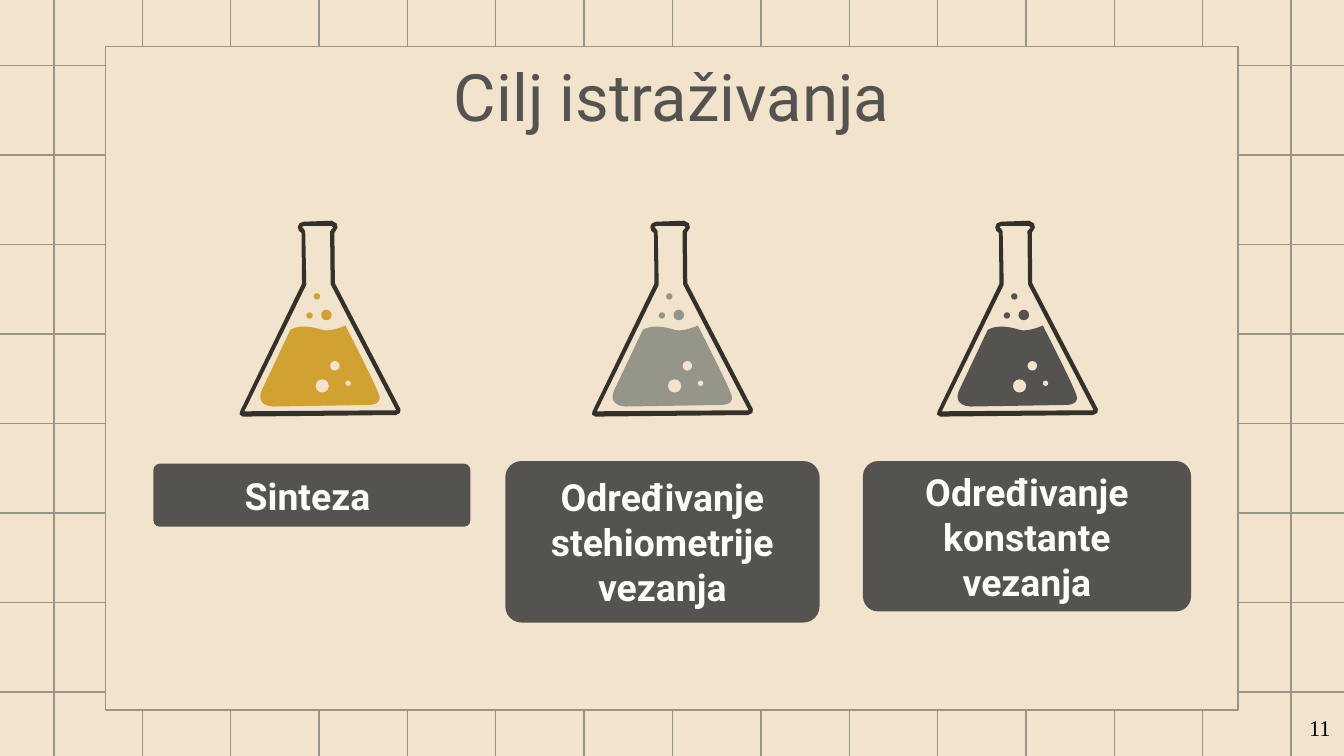
import pptx
import pptx.dml.color
import pptx.enum.shapes
import pptx.enum.text
import pptx.oxml
import pptx.oxml.ns
import pptx.util

Cm = pptx.util.Cm
RGB = pptx.dml.color.RGBColor
SHAPE = pptx.enum.shapes.MSO_SHAPE
ALIGN = pptx.enum.text.PP_ALIGN
ANCHOR = pptx.enum.text.MSO_ANCHOR

CREAM = RGB(0xF1, 0xE3, 0xCC)
SAGE = RGB(0x96, 0x95, 0x89)
CHARCOAL = RGB(0x55, 0x53, 0x4F)
GLASS = RGB(0x34, 0x31, 0x2B)
GOLD = RGB(0xD1, 0xA2, 0x32)
WHITE = RGB(0xFD, 0xFC, 0xF9)
BLACK = RGB(0, 0, 0)

WIDTH, HEIGHT = 25.4, 14.28

GLASS_OUTER = [
    (1.75, 0), (1.22, 0.02), (1.14, 0.05), (1.11, 0.12), (1.13, 0.19),
    (1.18, 0.23), (1.19, 1.19), (0.02, 3.6), (0.01, 3.66), (0.07, 3.7),
    (2.96, 3.67), (3.04, 3.63), (3.05, 3.56), (1.81, 1.18), (1.8, 0.23),
    (1.86, 0.13), (1.84, 0.05),
]
GLASS_INNER = [
    (1.75, 0.1), (1.78, 0.13), (1.75, 0.16), (1.72, 0.2), (1.73, 1.2),
    (2.97, 3.58), (0.1, 3.6), (1.27, 1.21), (1.27, 1.19), (1.25, 0.2),
    (1.22, 0.15), (1.19, 0.12), (1.22, 0.1),
]
LIQUID_CURVES = [
    [(0.43, 3.2), (0.43, 3.2), (0.28, 3.48), (0.64, 3.51)],
    [(2.46, 3.48), (2.46, 3.48), (2.72, 3.48), (2.64, 3.28)],
    [(2.64, 3.28), (2.57, 3.07), (2.01, 1.98), (2.01, 1.98)],
    [(2.01, 1.98), (2.01, 1.98), (1.73, 2.11), (1.57, 2.06)],
    [(1.57, 2.06), (1.3, 1.98), (1.12, 1.98), (0.97, 2.06)],
]
RISING_BUBBLES = [(1.65, 1.78, 0.2), (1.47, 1.43, 0.12), (1.33, 1.79, 0.12)]
LIQUID_BUBBLES = [(1.81, 2.74, 0.18), (2.06, 3.07, 0.1), (1.57, 3.12, 0.25)]

FLASK_TOP = 4.17
GOALS = [
    ("Sinteza\t", GOLD, 4.52, (2.9, 8.76, 5.99, 1.19)),
    ("Određivanje stehiometrije vezanja", SAGE, 11.18, (9.55, 8.71, 5.94, 3.05)),
    ("Određivanje konstante vezanja", CHARCOAL, 17.7, (16.31, 8.71, 6.2, 2.84)),
]


def write_text(frame, text, size, color, font="Roboto", bold=False,
               align=ALIGN.CENTER, anchor=ANCHOR.TOP, wrap=True):
    """Fill a text frame with one formatted paragraph."""
    frame.word_wrap = wrap
    frame.auto_size = pptx.enum.text.MSO_AUTO_SIZE.NONE
    frame.vertical_anchor = anchor
    paragraph = frame.paragraphs[0]
    paragraph.alignment = align
    run = paragraph.add_run()
    run.text = text
    run.font.name = font
    run.font.size = pptx.util.Pt(size)
    run.font.bold = bold
    run.font.color.rgb = color


def paint(shape, fill, line=None):
    """Give a shape its fill and an optional thin outline, without shadow."""
    shape.shadow.inherit = False
    shape.fill.solid()
    shape.fill.fore_color.rgb = fill
    if line is None:
        shape.line.fill.background()
    else:
        shape.line.color.rgb = line
        shape.line.width = pptx.util.Pt(0.75)


def add_preset(slide, kind, box, fill, line=None):
    """Add a painted preset shape in a box given in centimetres."""
    shape = slide.shapes.add_shape(kind, *map(Cm, box))
    paint(shape, fill, line)
    return shape


def add_outline(slide, left, top, contours, fill):
    """Add one freeform made of closed contours relative to a corner."""
    placed = [[(Cm(left + x), Cm(top + y)) for x, y in contour] for contour in contours]
    builder = slide.shapes.build_freeform(*placed[0][0])
    builder.add_line_segments(placed[0][1:], close=True)
    for contour in placed[1:]:
        builder.move_to(*contour[0])
        builder.add_line_segments(contour[1:], close=True)
    paint(builder.convert_to_shape(), fill)


def curve_points(controls, steps=10):
    """Sample a cubic Bezier curve."""
    points = []
    for step in range(steps + 1):
        t = step / steps
        weights = ((1 - t) ** 3, 3 * t * (1 - t) ** 2, 3 * t * t * (1 - t), t ** 3)
        points.append(tuple(sum(w * c[axis] for w, c in zip(weights, controls))
                            for axis in (0, 1)))
    return points


def add_grid_line(slide, x1, y1, x2, y2):
    """Draw one thin line of the background grid."""
    line = slide.shapes.add_connector(
        pptx.enum.shapes.MSO_CONNECTOR.STRAIGHT, *map(Cm, (x1, y1, x2, y2)))
    line.line.color.rgb = SAGE
    line.line.width = pptx.util.Pt(0.75)
    effects = pptx.oxml.parse_xml("<a:effectLst %s/>" % pptx.oxml.ns.nsdecls("a"))
    line._element.spPr.append(effects)


def add_background(slide, width, height):
    """Draw the squared paper and the panel on it."""
    slide.background.fill.solid()
    slide.background.fill.fore_color.rgb = CREAM
    for column in range(15):
        x = 1.02 + 1.67 * column
        add_grid_line(slide, x, 0, x, height)
    for row in range(8):
        y = 1.24 + 1.69 * row
        add_grid_line(slide, 0, y, width, y)
    add_preset(slide, SHAPE.RECTANGLE, (1.99, 0.88, 21.41, 12.53), CREAM, SAGE)


def add_title(slide, text, box):
    """Place the title placeholder above the panel."""
    title = slide.shapes.title
    title.left, title.top, title.width, title.height = map(Cm, box)
    write_text(title.text_frame, text, 35, CHARCOAL)
    slide.shapes._spTree.append(title._element)


def add_flask(slide, left, top, color):
    """Draw a flask with bubbling liquid from its top left corner."""
    add_outline(slide, left, top, [GLASS_OUTER, GLASS_INNER], GLASS)
    liquid = [point for controls in LIQUID_CURVES for point in curve_points(controls)]
    add_outline(slide, left, top, [liquid], color)
    for bubbles, fill in ((RISING_BUBBLES, color), (LIQUID_BUBBLES, CREAM)):
        for x, y, size in bubbles:
            box = (left + x - size / 2, top + y - size / 2, size, size)
            add_preset(slide, SHAPE.OVAL, box, fill)


def add_label(slide, text, box):
    """Add a rounded label with a research goal."""
    label = add_preset(slide, SHAPE.ROUNDED_RECTANGLE, box, CHARCOAL)
    label.adjustments[0] = 0.1
    frame = label.text_frame
    frame.margin_top = frame.margin_bottom = Cm(0.25)
    write_text(frame, text, 20, WHITE, bold=True, anchor=ANCHOR.MIDDLE)


def add_page_number(slide, text, box):
    """Write the page number in the corner."""
    number = slide.shapes.add_textbox(*map(Cm, box))
    write_text(number.text_frame, text, 12, BLACK, font="Times New Roman",
               align=ALIGN.LEFT, wrap=False)


def main():
    """Build and save the slide."""
    deck = pptx.Presentation()
    deck.slide_width, deck.slide_height = Cm(WIDTH), Cm(HEIGHT)
    slide = deck.slides.add_slide(deck.slide_layouts.get_by_name("Title Only"))
    add_background(slide, WIDTH, HEIGHT)
    add_title(slide, "Cilj istraživanja", (1.98, 0.94, 21.44, 1.65))
    for goal, color, flask_left, label_box in GOALS:
        add_flask(slide, flask_left, FLASK_TOP, color)
        add_label(slide, goal, label_box)
    add_page_number(slide, "11", (24.49, 13.36, 0.94, 0.76))
    deck.save("out.pptx")


if __name__ == "__main__":
    main()
